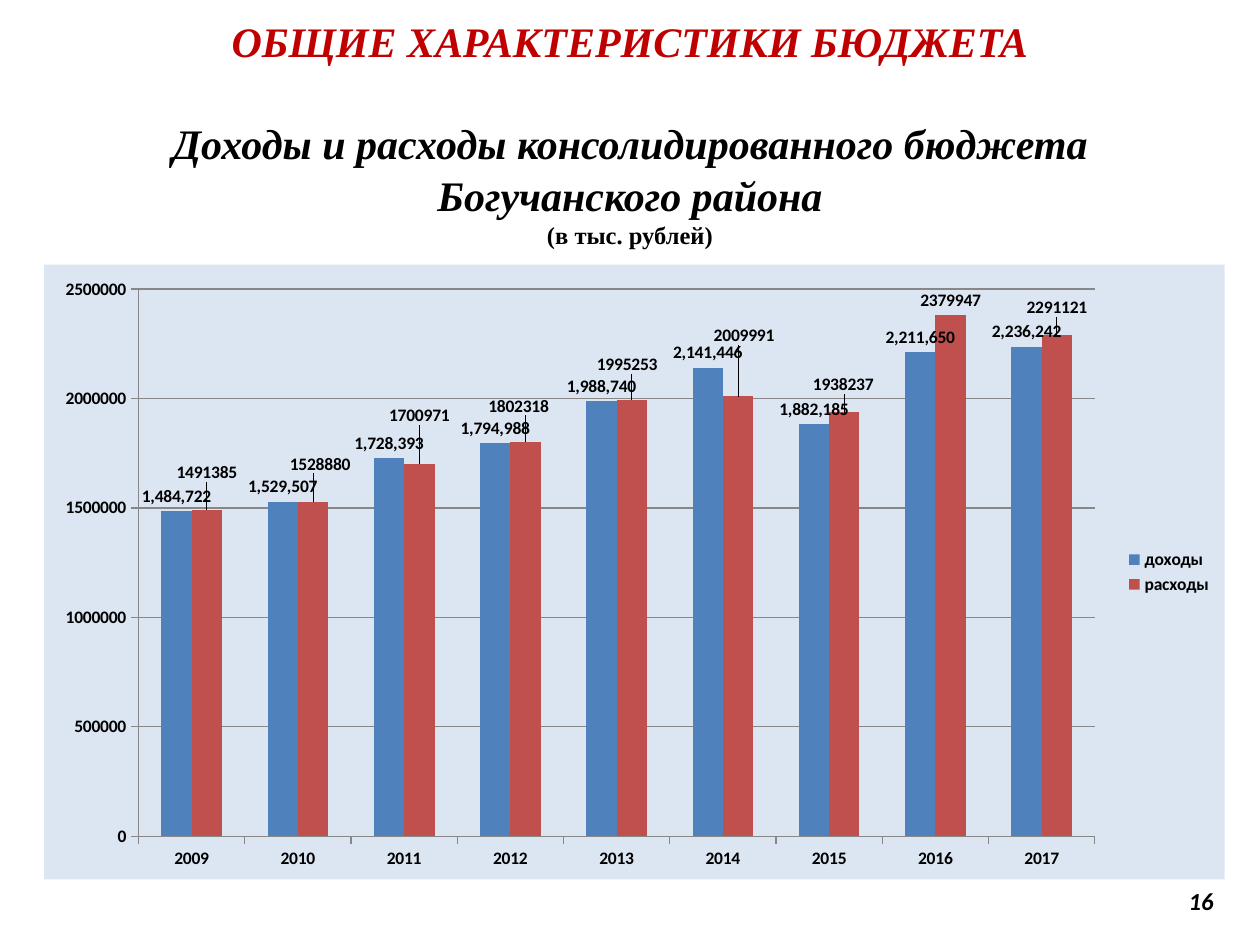
from lxml import etree
from pptx import Presentation
from pptx.chart.data import CategoryChartData
from pptx.dml.color import RGBColor
from pptx.enum.chart import XL_CHART_TYPE, XL_LABEL_POSITION, XL_LEGEND_POSITION, XL_TICK_MARK
from pptx.enum.text import MSO_ANCHOR, MSO_AUTO_SIZE, PP_ALIGN
from pptx.oxml.ns import qn
from pptx.util import Inches, Pt

COLUMNS = XL_CHART_TYPE.COLUMN_CLUSTERED
ABOVE = XL_LABEL_POSITION.OUTSIDE_END
LEGEND_RIGHT = XL_LEGEND_POSITION.RIGHT
TICK_OUT, TICK_NONE = XL_TICK_MARK.OUTSIDE, XL_TICK_MARK.NONE
TOP, MIDDLE = MSO_ANCHOR.TOP, MSO_ANCHOR.MIDDLE
CENTER, RIGHT = PP_ALIGN.CENTER, PP_ALIGN.RIGHT
GREY = "878787"


def color(value):
    return RGBColor.from_string(value)


def add_layout(parent, position, **shares):
    """Place a chart part by shares of the chart's size."""
    for old in parent.findall(qn("c:layout")):
        parent.remove(old)
    layout = etree.Element(qn("c:layout"))
    manual = etree.SubElement(layout, qn("c:manualLayout"))
    for tag, value in shares.items():
        etree.SubElement(manual, qn("c:" + tag)).set("val", str(value))
    parent.insert(position, layout)


prs = Presentation()
prs.slide_width, prs.slide_height = Inches(10), Inches(7.5)
slide = prs.slides.add_slide(prs.slide_layouts[5])

# Heading: text, size, colour, italic, space before
heading = slide.shapes.title
heading.left, heading.top = 0, Inches(0.12)
heading.width, heading.height = prs.slide_width, Inches(1.86)
frame = heading.text_frame
frame.auto_size = MSO_AUTO_SIZE.NONE
frame.vertical_anchor = TOP
frame.margin_top = frame.margin_bottom = 0
lines = [
    ("ОБЩИЕ ХАРАКТЕРИСТИКИ БЮДЖЕТА", 24, "C00000", True, 0),
    ("Доходы и расходы консолидированного бюджета", 24, "000000", True, 29.5),
    ("Богучанского района", 24, "000000", True, 1),
    ("(в тыс. рублей)", 14, "000000", False, 0),
]
for i, (text, size, ink, italic, gap) in enumerate(lines):
    line = frame.paragraphs[0] if i == 0 else frame.add_paragraph()
    line.alignment = CENTER
    line.space_before = Pt(gap)
    run = line.add_run()
    run.text = text
    run.font.name, run.font.size = "Times New Roman", Pt(size)
    run.font.bold, run.font.italic = True, italic
    run.font.color.rgb = color(ink)

# Budget data
budget = CategoryChartData()
budget.categories = [str(year) for year in range(2009, 2018)]
budget.add_series("доходы", [1484722, 1529507, 1728393, 1794988, 1988740,
                             2141446, 1882185, 2211650, 2236242])
budget.add_series("расходы", [1491385, 1528880, 1700971, 1802318, 1995253,
                              2009991, 1938237, 2379947, 2291121])
chart = slide.shapes.add_chart(COLUMNS, Inches(0.35), Inches(2.1),
                               Inches(9.37), Inches(4.88), budget).chart
chart.has_title = False
chart.font.name, chart.font.size, chart.font.bold = "Calibri", Pt(10), True
chart.font.color.rgb = color("000000")

# Chart background and plot area
space = chart.element if hasattr(chart, "element") else chart._chartSpace
background = etree.Element(qn("c:spPr"))
fill = etree.SubElement(background, qn("a:solidFill"))
etree.SubElement(fill, qn("a:srgbClr")).set("val", "DCE6F2")
etree.SubElement(etree.SubElement(background, qn("a:ln")), qn("a:noFill"))
space.find(qn("c:chart")).addnext(background)
add_layout(space.find(".//" + qn("c:plotArea")), 0, layoutTarget="inner",
           xMode="edge", yMode="edge", x=0.08, y=0.04, w=0.81, h=0.89)

# Axes and legend
amounts, years = chart.value_axis, chart.category_axis
amounts.minimum_scale, amounts.maximum_scale, amounts.major_unit = 0, 2500000, 500000
amounts.has_major_gridlines = True
amounts.major_gridlines.format.line.color.rgb = color(GREY)
amounts.tick_labels.number_format = "0"
amounts.tick_labels.number_format_is_linked = False
for axis in (amounts, years):
    axis.major_tick_mark, axis.minor_tick_mark = TICK_OUT, TICK_NONE
    axis.format.line.color.rgb = color(GREY)
    axis.tick_labels.font.bold = True
    axis.tick_labels.font.size = Pt(10)
chart.has_legend = True
chart.legend.position = LEGEND_RIGHT
chart.legend.include_in_layout = False
chart.legend.font.bold = True
chart.legend.font.size = Pt(10)

# Columns with their value labels
plot = chart.plots[0]
plot.gap_width, plot.overlap, plot.vary_by_categories = 150, 0, False
income, spending = plot.series
for series, ink, number_format in ((income, "4F81BD", "#,##0"),
                                   (spending, "C0504D", "0")):
    series.format.fill.solid()
    series.format.fill.fore_color.rgb = color(ink)
    series.invert_if_negative = False
    labels = series.data_labels
    labels.show_value = True
    labels.position = ABOVE
    labels.number_format, labels.number_format_is_linked = number_format, False
    labels.font.bold, labels.font.size = True, Pt(10)

# Spending labels are shifted clear of the income labels
shifts = {0: (0, -0.037), 1: (0.006, -0.037), 2: (0, -0.055),
          3: (-0.006, -0.034), 4: (-0.004, -0.033), 5: (0.005, -0.075),
          6: (-0.001, -0.021), 8: (0, -0.02)}
for i in shifts:
    label = spending.points[i].data_label
    label.position = ABOVE
    label.font.bold, label.font.size = True, Pt(10)
for label in space.iter(qn("c:dLbl")):
    dx, dy = shifts[int(label.find(qn("c:idx")).get("val"))]
    add_layout(label, 1, x=round(dx, 2) if abs(dx) >= 0.01 else dx, y=dy)

# Page number
page = slide.shapes.add_textbox(Inches(7.17), Inches(6.95), Inches(2.56), Inches(0.4))
page.text_frame.word_wrap = True
page.text_frame.vertical_anchor = MIDDLE
number = page.text_frame.paragraphs[0]
number.alignment = RIGHT
run = number.add_run()
run.text = "16"
run.font.name, run.font.size = "Calibri", Pt(14)
run.font.bold = run.font.italic = True
run.font.color.rgb = color("000000")

prs.save("out.pptx")
